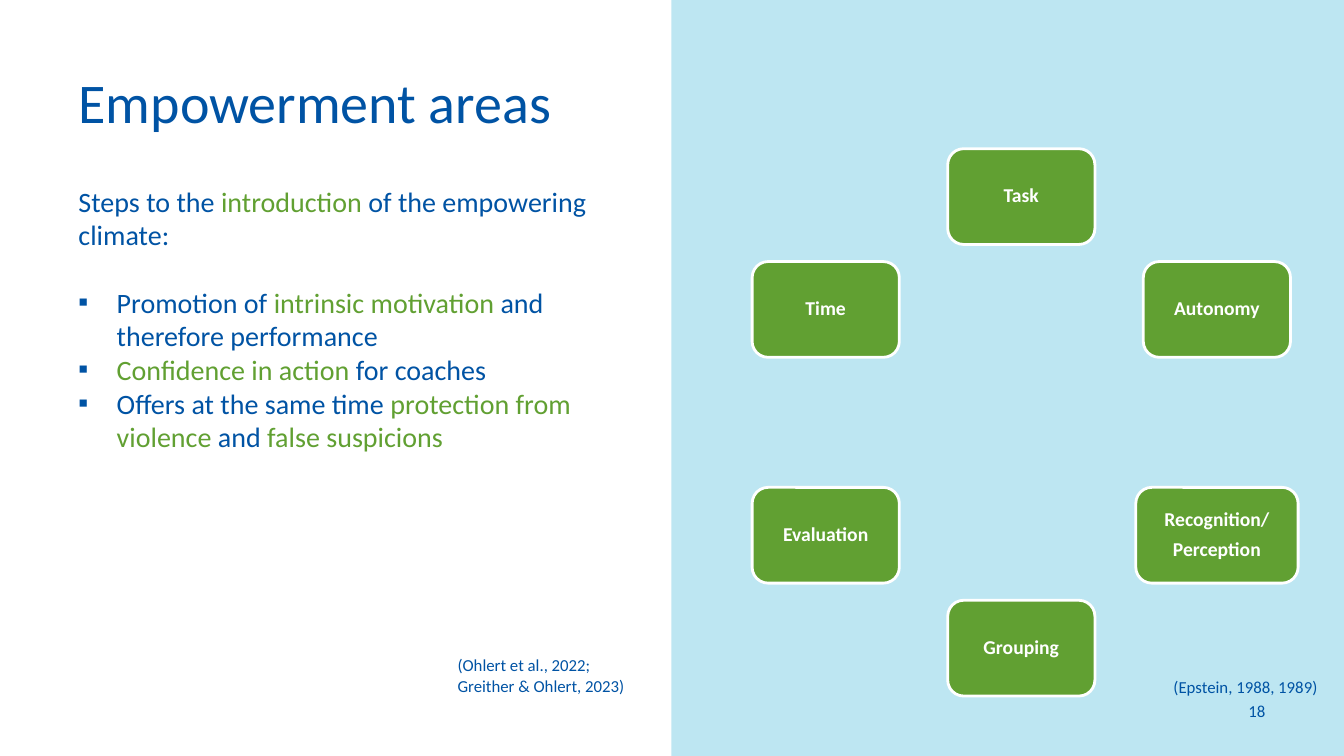
from dataclasses import dataclass
from math import cos, radians, sin

from lxml.etree import SubElement
from pptx import Presentation
from pptx.dml.color import RGBColor
from pptx.enum.shapes import MSO_SHAPE
from pptx.enum.text import MSO_ANCHOR, PP_ALIGN
from pptx.oxml.ns import qn
from pptx.util import Inches, Pt


@dataclass(frozen=True)
class Theme:
    font: str = "Calibri"
    blue: RGBColor = RGBColor(0x00, 0x53, 0xA4)
    green: RGBColor = RGBColor(0x61, 0xA0, 0x32)
    pale: RGBColor = RGBColor(0xBD, 0xE6, 0xF2)
    white: RGBColor = RGBColor(0xFF, 0xFF, 0xFF)
    title: int = 40
    body: int = 20
    label: int = 14
    small: int = 12


class SlideBuilder:
    def __init__(self, prs, theme):
        self.theme = theme
        self.s = prs.slides.add_slide(prs.slide_layouts[5])

    def run(self, p, text, size, color, bold=False):
        r = p.add_run()
        r.text = text
        r.font.name = self.theme.font
        r.font.size = Pt(size)
        r.font.color.rgb = color
        r.font.bold = bold

    def rich(self, p, pieces):
        """Add body runs from (text, highlighted) pairs."""
        t = self.theme
        for text, highlighted in pieces:
            self.run(p, text, t.body, t.green if highlighted else t.blue)

    def title(self, text, x, y, w, h):
        sp = self.s.shapes.title
        sp.left, sp.top, sp.width, sp.height = map(Inches, (x, y, w, h))
        tf = sp.text_frame
        tf.vertical_anchor = MSO_ANCHOR.MIDDLE
        p = tf.paragraphs[0]
        p.alignment = PP_ALIGN.LEFT
        self.run(p, text, self.theme.title, self.theme.blue)

    def text_frame(self, x, y, w, h):
        tf = self.s.shapes.add_textbox(*map(Inches, (x, y, w, h))).text_frame
        tf.word_wrap = True
        return tf

    def shape(self, kind, x, y, w, h, fill):
        sp = self.s.shapes.add_shape(kind, *map(Inches, (x, y, w, h)))
        sp.shadow.inherit = False
        sp.fill.solid()
        sp.fill.fore_color.rgb = fill
        sp.line.fill.background()
        return sp

    def panel(self, x, y, w, h):
        self.shape(MSO_SHAPE.RECTANGLE, x, y, w, h, self.theme.pale)

    def body(self, intro, bullets, x, y, w, h):
        tf = self.text_frame(x, y, w, h)
        self.rich(tf.paragraphs[0], intro)
        for i, pieces in enumerate(bullets):
            p = tf.add_paragraph()
            p.space_before = Pt(24 if i == 0 else 0)
            self.bullet(p)
            self.rich(p, pieces)

    def bullet(self, p):
        pPr = p._p.get_or_add_pPr()
        pPr.set("marL", str(Inches(0.38)))
        pPr.set("indent", str(Inches(-0.38)))
        color = SubElement(pPr, qn("a:buClr"))
        SubElement(color, qn("a:srgbClr"), val=str(self.theme.blue))
        SubElement(pPr, qn("a:buFont"), typeface=self.theme.font)
        SubElement(pPr, qn("a:buChar"), char="▪")

    def note(self, lines, x, y, w, h, align=PP_ALIGN.LEFT, anchor=MSO_ANCHOR.TOP):
        tf = self.text_frame(x, y, w, h)
        tf.vertical_anchor = anchor
        for i, line in enumerate(lines):
            p = tf.add_paragraph() if i else tf.paragraphs[0]
            p.alignment = align
            self.run(p, line, self.theme.small, self.theme.blue)

    def area(self, lines, cx, cy, w, h):
        """Draw a rounded box centred on (cx, cy)."""
        t = self.theme
        sp = self.shape(MSO_SHAPE.ROUNDED_RECTANGLE,
                        cx - w / 2, cy - h / 2, w, h, t.green)
        sp.adjustments[0] = 0.167
        sp.line.color.rgb = t.white
        sp.line.width = Pt(2)
        tf = sp.text_frame
        tf.word_wrap = True
        tf.vertical_anchor = MSO_ANCHOR.MIDDLE
        tf.margin_left = tf.margin_right = Inches(0.11)
        tf.margin_top = tf.margin_bottom = Inches(0.11)
        for i, line in enumerate(lines):
            p = tf.add_paragraph() if i else tf.paragraphs[0]
            p.alignment = PP_ALIGN.CENTER
            p.line_spacing = 0.9
            p.space_after = Pt(5.9)
            self.run(p, line, t.label, t.white, bold=True)

    def ring(self, areas, cx, cy, radius):
        """Spread the areas clockwise around a circle, starting at the top."""
        for i, (lines, width) in enumerate(areas):
            angle = radians(360 * i / len(areas) - 90)
            self.area(lines, cx + radius * cos(angle),
                      cy + radius * sin(angle), width, 0.95)


INTRO = [("Steps to the ", False), ("introduction", True),
         (" of the empowering climate:", False)]
BULLETS = [
    [("Promotion of ", False), ("intrinsic motivation ", True),
     ("and therefore performance", False)],
    [("Confidence in action", True), (" for coaches", False)],
    [("Offers at the same time ", False), ("protection from violence ", True),
     ("and ", False), ("false suspicions", True)],
]
AREAS = [
    (["Task"], 1.46),
    (["Autonomy"], 1.46),
    (["Recognition/", "Perception"], 1.61),
    (["Grouping"], 1.46),
    (["Evaluation"], 1.46),
    (["Time"], 1.46),
]


def main():
    prs = Presentation()
    prs.slide_width, prs.slide_height = Inches(13.33), Inches(7.5)
    slide = SlideBuilder(prs, Theme())
    slide.panel(6.66, 0, 6.67, 7.5)
    slide.title("Empowerment areas", 0.68, 0.45, 10.76, 1.1)
    slide.body(INTRO, BULLETS, 0.68, 1.78, 5.34, 4.87)
    slide.ring(AREAS, 10.13, 4.19, 2.24)
    slide.note(["(Ohlert et al., 2022;", "Greither & Ohlert, 2023)"],
               4.44, 6.45, 2.57, 0.5)
    slide.note(["(Epstein, 1988, 1989)"], 11.54, 6.66, 2.11, 0.3)
    slide.note(["18"], 11.92, 6.9, 0.73, 0.31, PP_ALIGN.RIGHT, MSO_ANCHOR.MIDDLE)
    prs.save("out.pptx")


if __name__ == "__main__":
    main()
